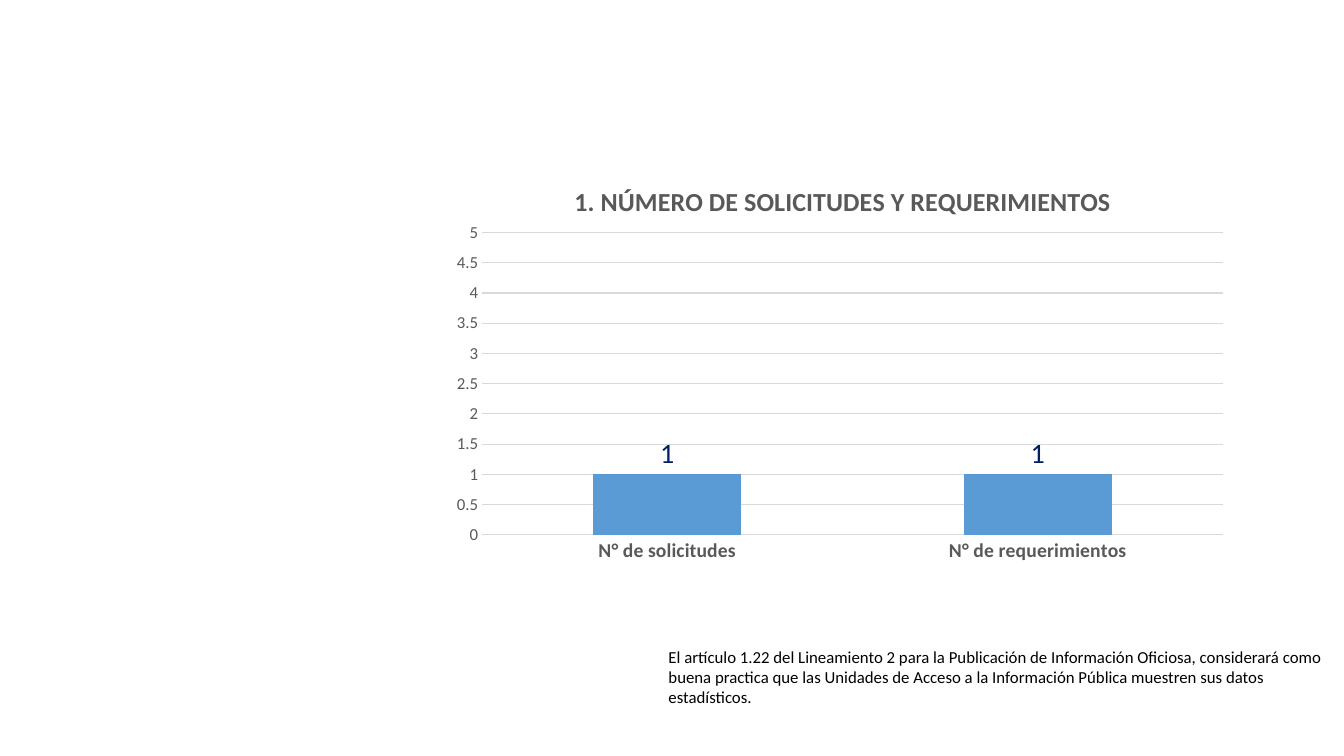
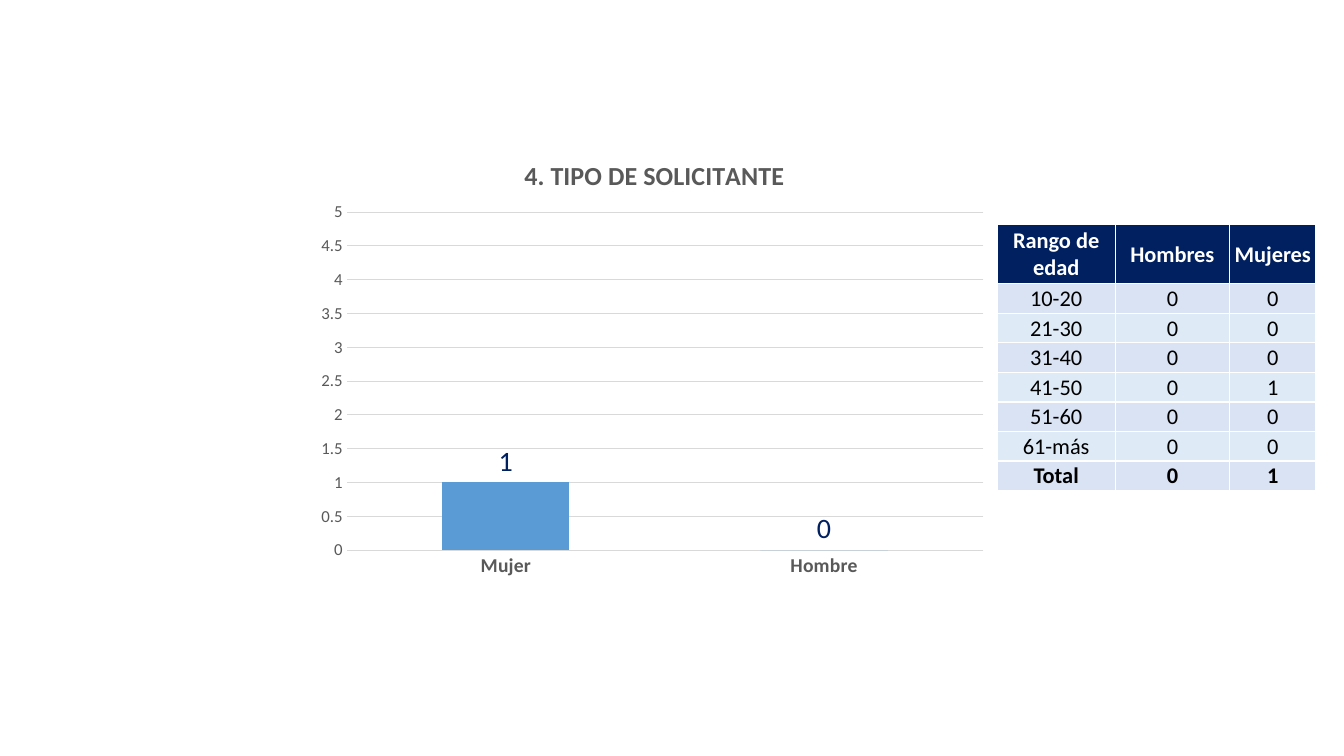
from dataclasses import dataclass

import pptx
import pptx.chart.data
import pptx.dml.color
import pptx.enum.chart
import pptx.enum.text
import pptx.oxml
import pptx.oxml.ns
import pptx.util

RGBColor = pptx.dml.color.RGBColor
Pt = pptx.util.Pt
Align = pptx.enum.text.PP_ALIGN

FONT = "Calibri"
WHITE = RGBColor(0xFF, 0xFF, 0xFF)
BLACK = RGBColor(0x00, 0x00, 0x00)
GRAY = RGBColor(0x59, 0x59, 0x59)
GRID = RGBColor(0xD9, 0xD9, 0xD9)
BLUE = RGBColor(0x5B, 0x9B, 0xD5)
NAVY = RGBColor(0x00, 0x20, 0x60)
BANDS = (RGBColor(0xDA, 0xE3, 0xF3), RGBColor(0xDE, 0xEB, 0xF7))

SLIDE_W = pptx.util.Inches(13.33)
SLIDE_H = pptx.util.Inches(7.5)
BLANK_LAYOUT = 6


@dataclass(frozen=True)
class Box:
    """A rectangle in percent of the slide's width and height."""
    left: float
    top: float
    width: float
    height: float

    def emu(self) -> tuple[int, int, int, int]:
        return (int(SLIDE_W * self.left / 100), int(SLIDE_H * self.top / 100),
                int(SLIDE_W * self.width / 100), int(SLIDE_H * self.height / 100))


@dataclass(frozen=True)
class BarChart:
    """Title and plot places are shares of the chart's size."""
    title: str
    values: dict[str, int]
    box: Box
    title_at: tuple[float, float]
    plot_at: tuple[float, float, float, float]


NOTE_BOX = Box(49, 84.9, 51, 9.5)
NOTE = ("El artículo 1.22 del Lineamiento 2 para la Publicación de Información Oficiosa, "
        "considerará como buena practica que las Unidades de Acceso a la Información "
        "Pública muestren sus datos estadísticos.")

REQUESTS = BarChart("1. NÚMERO DE SOLICITUDES Y REQUERIMIENTOS",
                    {"N° de solicitudes": 1, "N° de requerimientos": 1},
                    Box(32.9, 20.9, 59.3, 54.8), (0.16, 0.05), (0.05, 0.18, 0.93, 0.73))
APPLICANTS = BarChart("4. TIPO DE SOLICITANTE", {"Mujer": 1, "Hombre": 0},
                      Box(22.7, 17.2, 51.5, 60.4), (0.31, 0.05), (0.06, 0.18, 0.92, 0.74))

AGE_BOX = Box(74.2, 29.7, 23.7, 35.2)
AGE_COLUMNS = (0.37, 0.36, 0.27)
AGE_ROWS = (
    ("Rango de edad", "Hombres", "Mujeres"),
    ("10-20", "0", "0"),
    ("21-30", "0", "0"),
    ("31-40", "0", "0"),
    ("41-50", "0", "1"),
    ("51-60", "0", "0"),
    ("61-más", "0", "0"),
    ("Total", "0", "1"),
)


def style_font(font, *, size: float, color: RGBColor, bold: bool = False) -> None:
    font.name = FONT
    font.size = Pt(size)
    font.bold = bold
    font.color.rgb = color


def write_text(tf, text: str, *, size: float, color: RGBColor = BLACK,
               bold: bool = False, align: Align = Align.LEFT) -> None:
    p = tf.paragraphs[0]
    p.alignment = align
    r = p.add_run()
    r.text = text
    style_font(r.font, size=size, color=color, bold=bold)


def set_layout(parent, places: dict[str, float], inner: bool = False) -> None:
    """Give a chart title or plot area a manual layout."""
    for old in parent.findall(pptx.oxml.ns.qn("c:layout")):
        parent.remove(old)
    target = '<c:layoutTarget val="inner"/>' if inner else ""
    modes = "".join(f'<c:{k}Mode val="edge"/>' for k in ("x", "y"))
    sizes = "".join(f'<c:{k} val="{v}"/>' for k, v in places.items())
    layout = pptx.oxml.parse_xml(
        f'<c:layout {pptx.oxml.ns.nsdecls("c")}><c:manualLayout>'
        f"{target}{modes}{sizes}</c:manualLayout></c:layout>")
    tx = parent.find(pptx.oxml.ns.qn("c:tx"))
    if tx is None:
        parent.insert(0, layout)
    else:
        tx.addnext(layout)


def style_axes(chart) -> None:
    for axis, size, bold in ((chart.category_axis, 14, True), (chart.value_axis, 12, False)):
        axis.major_tick_mark = pptx.enum.chart.XL_TICK_MARK.NONE
        axis.minor_tick_mark = pptx.enum.chart.XL_TICK_MARK.NONE
        axis.format.line.fill.background()
        style_font(axis.tick_labels.font, size=size, color=GRAY, bold=bold)
    axis = chart.value_axis
    axis.minimum_scale, axis.maximum_scale, axis.major_unit = 0, 5, 0.5
    axis.has_major_gridlines = True
    line = axis.major_gridlines.format.line
    line.color.rgb = GRID
    line.width = Pt(0.75)


def add_bar_chart(slide, bars: BarChart) -> None:
    data = pptx.chart.data.CategoryChartData()
    data.categories = list(bars.values)
    data.add_series(bars.title, list(bars.values.values()))
    chart = slide.shapes.add_chart(pptx.enum.chart.XL_CHART_TYPE.COLUMN_CLUSTERED,
                                   *bars.box.emu(), data).chart
    style_font(chart.font, size=10, color=BLACK)
    chart.has_legend = False
    chart.has_title = True
    title = chart.chart_title
    write_text(title.text_frame, bars.title, size=18.6, color=GRAY, bold=True,
               align=Align.CENTER)
    title.include_in_layout = False
    set_layout(title._element, dict(zip("xy", bars.title_at)))
    set_layout(chart._chartSpace.chart.plotArea, dict(zip("xywh", bars.plot_at)), inner=True)
    style_axes(chart)

    plot = chart.plots[0]
    plot.gap_width = 150
    plot.vary_by_categories = False
    fill = plot.series[0].format.fill
    fill.solid()
    fill.fore_color.rgb = BLUE
    plot.has_data_labels = True
    labels = plot.data_labels
    labels.show_value = True
    labels.position = pptx.enum.chart.XL_LABEL_POSITION.OUTSIDE_END
    style_font(labels.font, size=20, color=NAVY)


def set_borders(cell, color: RGBColor) -> None:
    for side in "LRTB":
        cell._tc.get_or_add_tcPr().append(pptx.oxml.parse_xml(
            f'<a:ln{side} {pptx.oxml.ns.nsdecls("a")} w="{Pt(1)}"><a:solidFill>'
            f'<a:srgbClr val="{color}"/></a:solidFill></a:ln{side}>'))


def add_age_table(slide) -> None:
    left, top, width, height = AGE_BOX.emu()
    table = slide.shapes.add_table(len(AGE_ROWS), len(AGE_COLUMNS),
                                   left, top, width, height).table
    table.horz_banding = False
    for column, share in zip(table.columns, AGE_COLUMNS):
        column.width = int(width * share)
    unit = height // (len(AGE_ROWS) + 1)
    last = len(AGE_ROWS) - 1
    for i, texts in enumerate(AGE_ROWS):
        header = i == 0
        table.rows[i].height = unit * 2 if header else unit
        for j, text in enumerate(texts):
            cell = table.cell(i, j)
            cell.margin_left = cell.margin_right = cell.margin_top = pptx.util.Inches(0.01)
            cell.margin_bottom = 0
            cell.vertical_anchor = pptx.enum.text.MSO_ANCHOR.MIDDLE
            set_borders(cell, WHITE)
            cell.fill.solid()
            cell.fill.fore_color.rgb = NAVY if header else BANDS[(i - 1) % 2]
            write_text(cell.text_frame, text, size=16, color=WHITE if header else BLACK,
                       bold=i in (0, last), align=Align.CENTER)


def add_note(slide) -> None:
    tf = slide.shapes.add_textbox(*NOTE_BOX.emu()).text_frame
    tf.word_wrap = True
    write_text(tf, NOTE, size=12)


def main() -> None:
    prs = pptx.Presentation()
    prs.slide_width, prs.slide_height = SLIDE_W, SLIDE_H
    layout = prs.slide_layouts[BLANK_LAYOUT]

    slide = prs.slides.add_slide(layout)
    add_note(slide)
    add_bar_chart(slide, REQUESTS)

    slide = prs.slides.add_slide(layout)
    add_bar_chart(slide, APPLICANTS)
    add_age_table(slide)

    prs.save("out.pptx")


if __name__ == "__main__":
    main()
